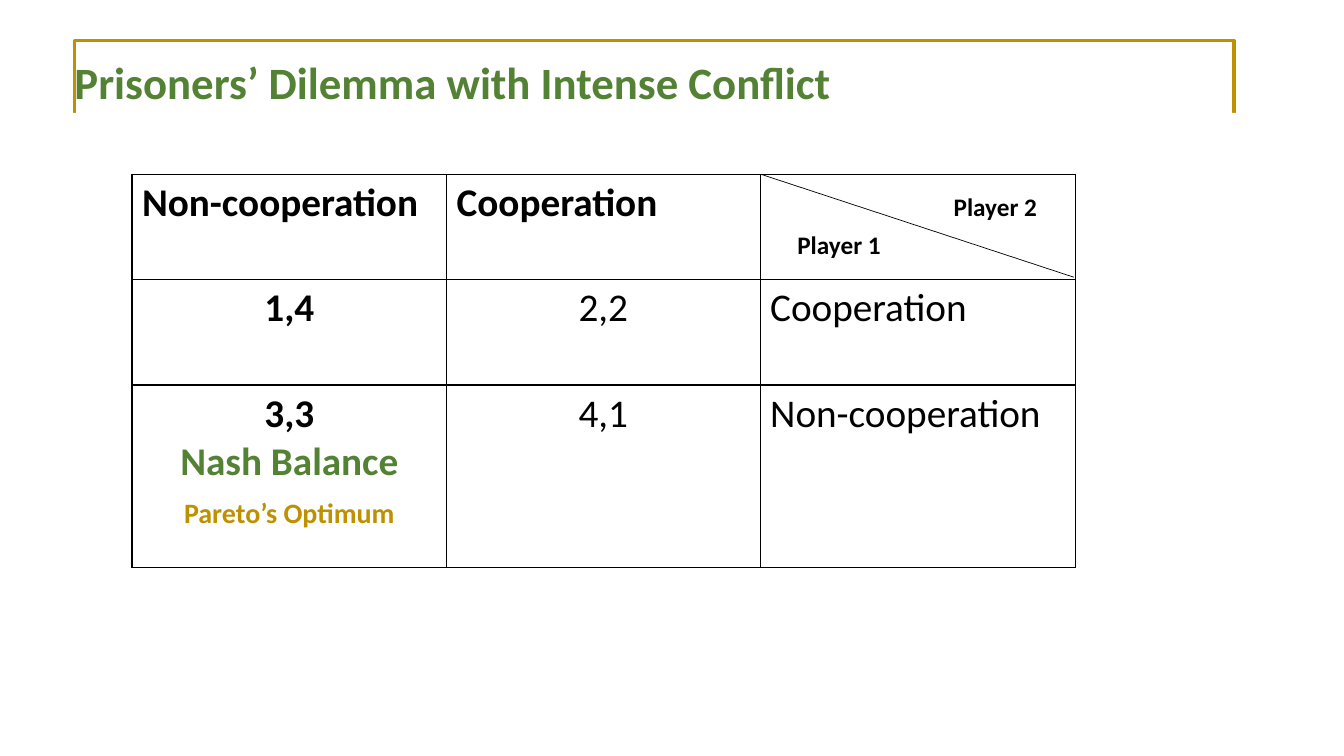
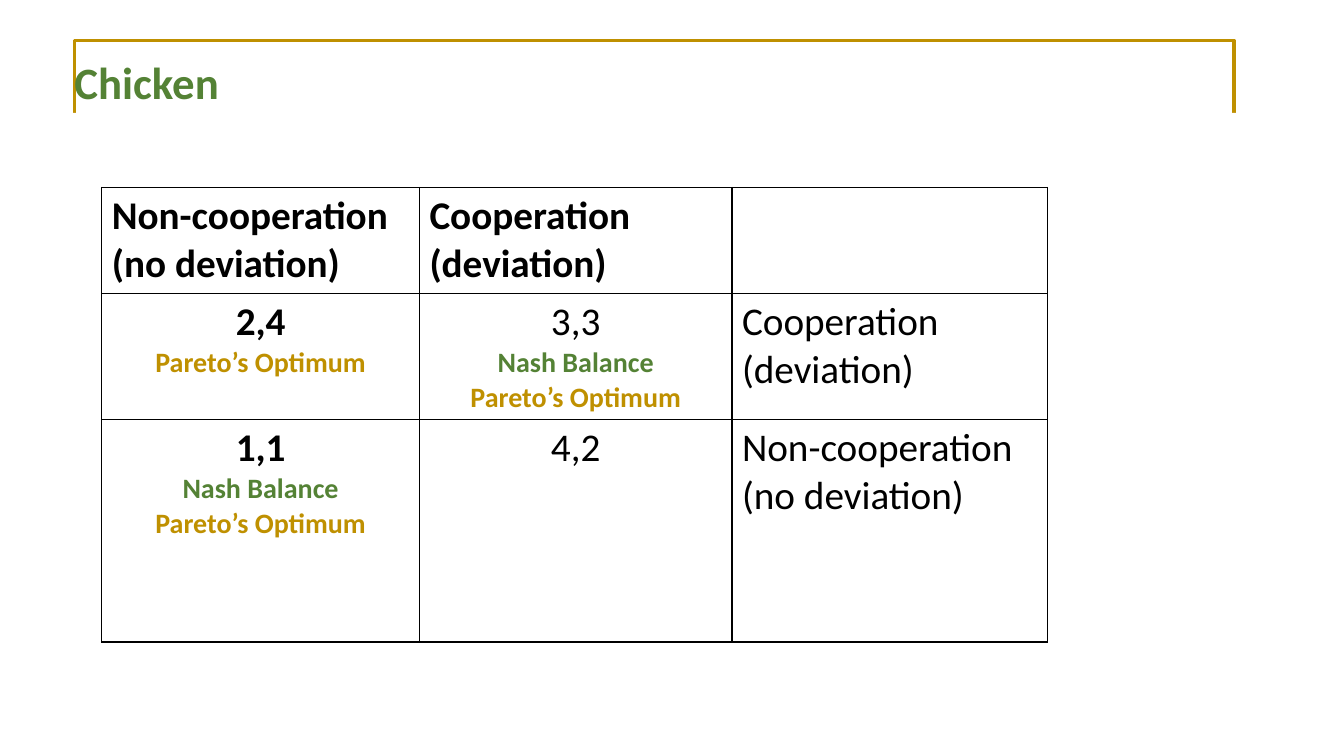
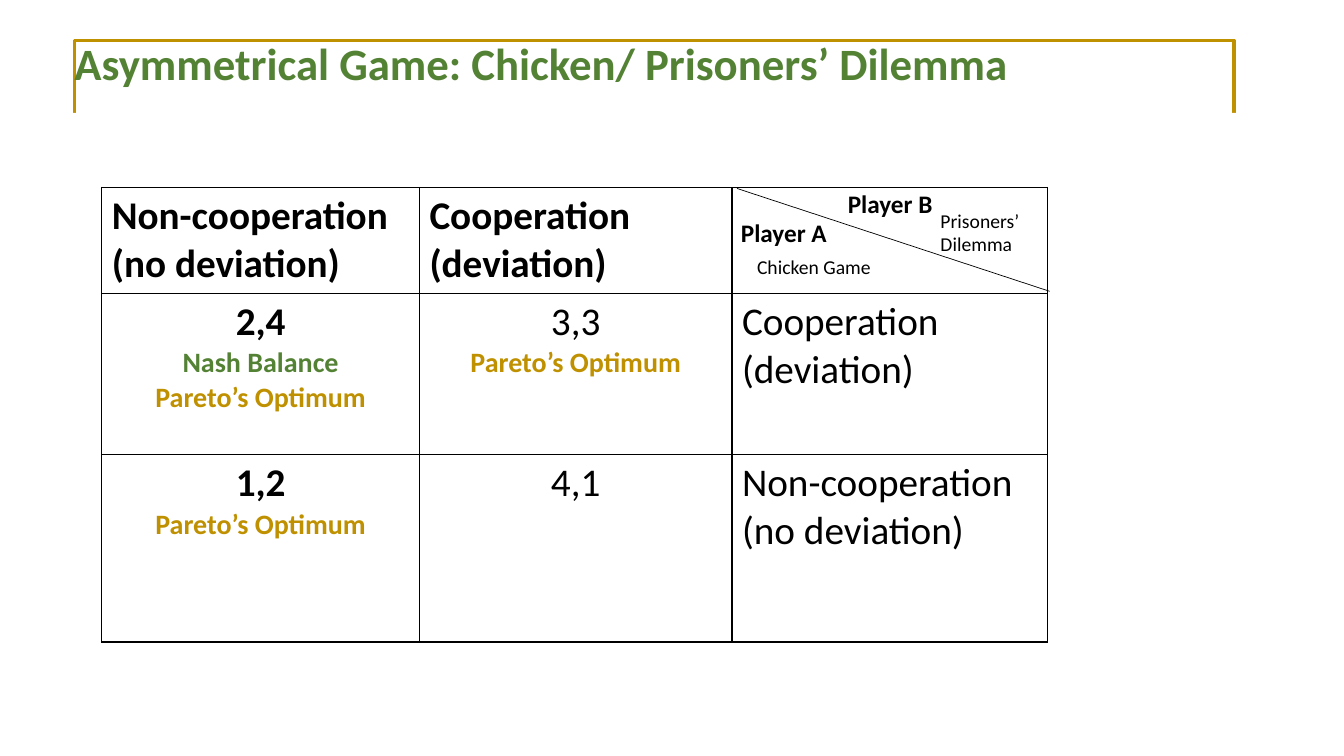
from lxml.etree import SubElement
from pptx import Presentation
from pptx.dml.color import RGBColor
from pptx.enum.shapes import MSO_CONNECTOR, MSO_SHAPE
from pptx.enum.text import MSO_ANCHOR, PP_ALIGN
from pptx.oxml import parse_xml
from pptx.oxml.ns import nsdecls, qn
from pptx.util import Inches, Pt

COLORS = {"green": "548235", "gold": "BF9000", "black": "000000", "white": "FFFFFF"}
FONT = "Calibri"


def color(name):
    return RGBColor.from_string(COLORS[name])


class Deck:
    """Shared style and the slide being built."""

    def __init__(self):
        self.prs = Presentation()
        self.prs.slide_width = Inches(13.33)
        self.prs.slide_height = Inches(7.5)
        self.slide = None

    def new_slide(self, title, title_top=0.33):
        self.slide = self.prs.slides.add_slide(self.prs.slide_layouts[6])
        # Open-bottomed gold frame: a box whose lower part is covered
        self.box(0.74, 0.4, 11.5, 1.26, line="gold")
        frame = self.text(title, 0.64, title_top, 11.5, 1.03, 32, True, "green")
        frame.vertical_anchor = MSO_ANCHOR.MIDDLE
        frame.paragraphs[0].line_spacing = 0.9
        self.box(0.64, 1.12, 11.77, 0.61, fill="white")

    def box(self, left, top, width, height, fill=None, line=None):
        box = self.slide.shapes.add_shape(
            MSO_SHAPE.RECTANGLE, Inches(left), Inches(top), Inches(width), Inches(height))
        box.shadow.inherit = False
        if fill:
            box.fill.solid()
            box.fill.fore_color.rgb = color(fill)
        else:
            box.fill.background()
        if line:
            box.line.color.rgb = color(line)
            box.line.width = Pt(2.25)
        else:
            box.line.fill.background()

    def style(self, paragraph, size, bold=False, ink="black"):
        font = paragraph.font
        font.name, font.size, font.bold = FONT, Pt(size), bold
        font.color.rgb = color(ink)

    def text(self, words, left, top, width, height, size, bold=False, ink="black"):
        frame = self.slide.shapes.add_textbox(
            Inches(left), Inches(top), Inches(width), Inches(height)).text_frame
        frame.word_wrap = True
        frame.text = words
        self.style(frame.paragraphs[0], size, bold, ink)
        return frame

    def diagonal(self, left, top):
        line = self.slide.shapes.add_connector(
            MSO_CONNECTOR.STRAIGHT, Inches(left), Inches(top),
            Inches(left + 3.1), Inches(top + 1.02))
        line.line.color.rgb = color("black")
        line.line.width = Pt(0.5)
        SubElement(line._element.spPr, qn("a:effectLst"))

    def payoffs(self, left, top, widths, heights, rows):
        """Each cell is a list of lines: plain text, or (text, ink, size, space before)."""
        table = self.slide.shapes.add_table(
            len(rows), len(widths), Inches(left), Inches(top),
            Inches(sum(widths)), Inches(sum(heights))).table
        table.first_row = table.horz_banding = False
        for column, width in zip(table.columns, widths):
            column.width = Inches(width)
        for r, row in enumerate(rows):
            table.rows[r].height = Inches(heights[r])
            for c, lines in enumerate(row):
                self.cell(table.cell(r, c), lines, bold=r == 0 or c == 0,
                          centered=r > 0 and c < 2)

    def cell(self, cell, lines, bold, centered):
        cell.fill.background()
        for index, side in enumerate(("lnL", "lnR", "lnT", "lnB")):
            cell._tc.get_or_add_tcPr().insert(index, parse_xml(
                f'<a:{side} {nsdecls("a")} w="{Pt(1)}"><a:solidFill>'
                f'<a:srgbClr val="{COLORS["black"]}"/></a:solidFill></a:{side}>'))
        frame = cell.text_frame
        for index, line in enumerate(lines):
            paragraph = frame.add_paragraph() if index else frame.paragraphs[0]
            if centered:
                paragraph.alignment = PP_ALIGN.CENTER
            if isinstance(line, str):
                paragraph.text = line
                self.style(paragraph, 28, bold)
            else:
                paragraph.text, ink, size, before = line
                self.style(paragraph, size, True, ink)
                paragraph.space_before = Pt(before)


# Repeated cell contents
NASH = ("Nash Balance", "green", 20, 0)
PARETO = ("Pareto’s Optimum", "gold", 20, 0)
REFUSE = ["Non-cooperation", "(no deviation)"]
COOPERATE = ["Cooperation", "(deviation)"]
CHICKEN_GRID = (1.01, 1.86, [3.15, 3.1, 3.13])


def main():
    deck = Deck()

    # Prisoners' dilemma
    deck.new_slide("Prisoners’ Dilemma with Intense Conflict")
    deck.payoffs(1.31, 1.73, [3.12, 3.11, 3.13], [1.04, 1.05, 1.81], [
        [["Non-cooperation"], ["Cooperation"], []],
        [["1,4"], ["2,2"], ["Cooperation"]],
        [["3,3", ("Nash Balance", "green", 28, 0), ("Pareto’s Optimum", "gold", 20, 7.5)],
         ["4,1"], ["Non-cooperation"]],
    ])
    deck.diagonal(7.55, 1.73)
    deck.text("Player 2", 9.36, 1.85, 1.29, 0.4, 18, True)
    deck.text("Player 1", 7.81, 2.23, 1.29, 0.4, 18, True)

    # Chicken
    deck.new_slide("Chicken")
    deck.payoffs(*CHICKEN_GRID, [1.05, 1.25, 2.21], [
        [REFUSE, COOPERATE, []],
        [["2,4", PARETO], ["3,3", NASH, PARETO], COOPERATE],
        [["1,1", NASH, PARETO], ["4,2"], REFUSE],
    ])

    # Asymmetrical game
    deck.new_slide("Asymmetrical Game: Chicken/ Prisoners’ Dilemma", title_top=0.14)
    deck.payoffs(*CHICKEN_GRID, [1.05, 1.6, 1.86], [
        [REFUSE, COOPERATE, []],
        [["2,4", NASH, PARETO], ["3,3", PARETO], COOPERATE],
        [["1,2", PARETO], ["4,1"], REFUSE],
    ])
    deck.diagonal(7.31, 1.87)
    deck.text("Player B", 8.31, 1.82, 1.29, 0.4, 18, True)
    deck.text("Player A", 7.25, 2.11, 1.29, 0.4, 18, True)
    deck.text("Chicken Game", 7.41, 2.48, 1.71, 0.34, 14)
    deck.text("Prisoners’ Dilemma", 9.23, 2.02, 1.2, 0.57, 14)

    deck.prs.save("out.pptx")


if __name__ == "__main__":
    main()
